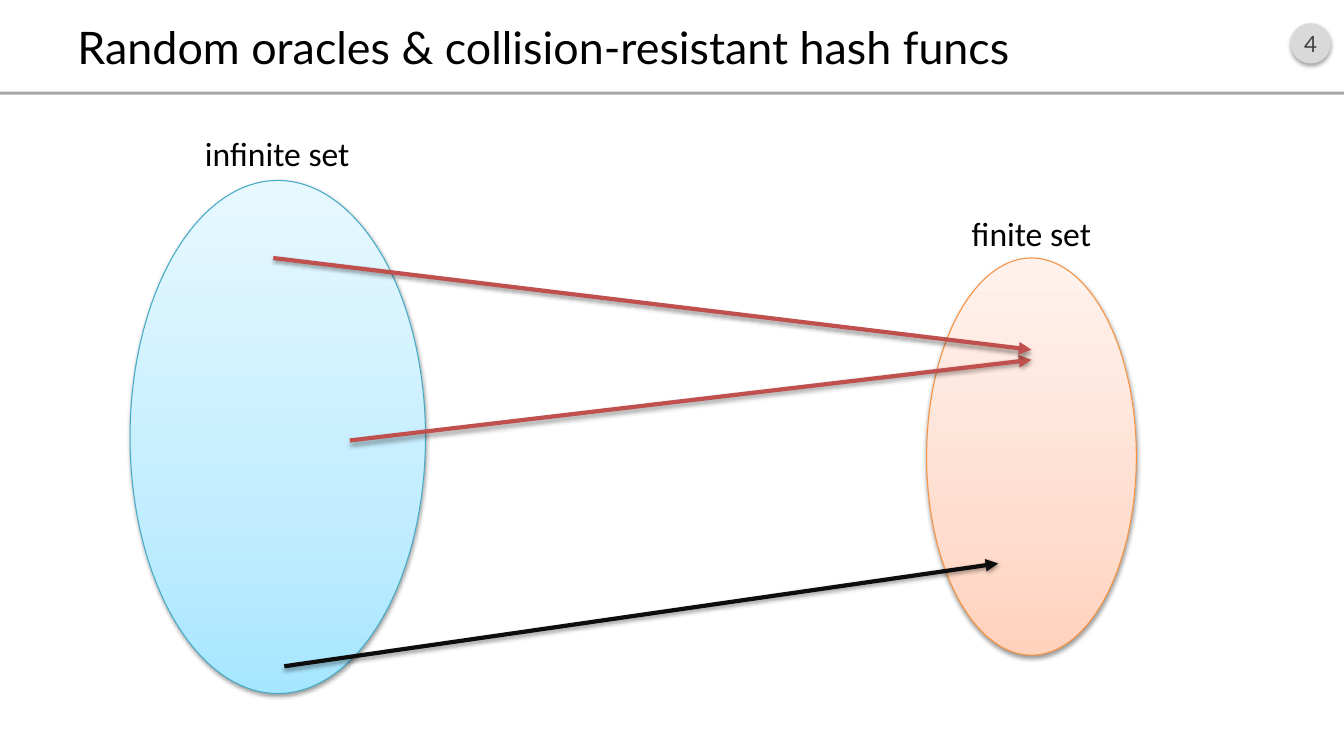
import copy

import lxml.etree
import pptx
import pptx.dml.color
import pptx.enum.shapes
import pptx.enum.text
import pptx.oxml
import pptx.oxml.ns
import pptx.util

PX = 9144  # EMU per px, 100 px to the inch
COLORS = {
    "text": "000000",
    "badge": "D9D9D9",
    "badge text": "404040",
    "rule": "A6A6A6",
    "collision": "C0504D",
    "mapping": "0D0D0D",
    "infinite line": "46AAC5",
    "finite line": "F69240",
}
GRADIENTS = {
    "infinite": ["A7E6FF", "C1EDFF", "E7F8FF"],
    "finite": ["FFD2BD", "FFDED0", "FFF2ED"],
}
STOPS = [0, 0.35, 1]
rgb = pptx.dml.color.RGBColor.from_string
qn = pptx.oxml.ns.qn
SHAPE = pptx.enum.shapes.MSO_SHAPE
ALIGN = pptx.enum.text.PP_ALIGN
ANCHOR = pptx.enum.text.MSO_ANCHOR


def add_shadow(item, opacity, distance):
    """Give a shape or connector a soft shadow straight below it."""
    properties = item._element.spPr
    effects = properties.find(qn("a:effectLst"))
    if effects is None:
        effects = lxml.etree.SubElement(properties, qn("a:effectLst"))
    effects.append(pptx.oxml.parse_xml(
        f'<a:outerShdw {pptx.oxml.ns.nsdecls("a")} blurRad="{round(3.1 * 12700)}" '
        f'dist="{round(distance * 12700)}" dir="5400000" rotWithShape="0">'
        f'<a:srgbClr val="000000"><a:alpha val="{opacity * 1000}"/></a:srgbClr>'
        '</a:outerShdw>'))


def write(holder, words, size, font, color, align, anchor):
    frame = holder.text_frame
    frame.text = words
    frame.vertical_anchor = anchor
    paragraph = frame.paragraphs[0]
    paragraph.alignment = align
    run_font = paragraph.runs[0].font
    run_font.size = pptx.util.Pt(size)
    run_font.name = font
    run_font.color.rgb = rgb(COLORS[color])


deck = pptx.Presentation()
deck.slide_width, deck.slide_height = 1333 * PX, 750 * PX
slide = deck.slides.add_slide(deck.slide_layouts[6])
shapes = slide.shapes

# Header: page badge, rule and title
badge = shapes.add_shape(SHAPE.OVAL, 1280 * PX, 23 * PX, 40 * PX, 40 * PX)
rule = shapes.add_shape(SHAPE.RECTANGLE, 0, 91 * PX, 1333 * PX, 3 * PX)
for part, color in [(badge, "badge"), (rule, "rule")]:
    part.shadow.inherit = False
    part.fill.solid()
    part.fill.fore_color.rgb = rgb(COLORS[color])
    part.line.fill.background()
add_shadow(badge, 35, 1.8)
badge.text_frame.margin_left = badge.text_frame.margin_right = 0
write(badge, "4", 16, "Lato", "badge text", ALIGN.CENTER, ANCHOR.MIDDLE)

title = shapes.add_textbox(67 * PX, 16 * PX, 1200 * PX, 60 * PX)
title.text_frame.word_wrap = True
write(title, "Random oracles & collision-resistant hash funcs", 32, "Lato", "text",
      ALIGN.LEFT, ANCHOR.MIDDLE)

# The two sets, each with its label above
for kind, set_box, label_box in [
    ("infinite", (129, 179, 293, 509), (187, 127, 176, 50)),
    ("finite", (919, 256, 208, 394), (948, 206, 150, 50)),
]:
    oval = shapes.add_shape(SHAPE.OVAL, *[length * PX for length in set_box])
    oval.shadow.inherit = False
    oval.fill.gradient()
    oval.fill.gradient_angle = 90
    first_stop = oval._element.spPr.find(".//" + qn("a:gs"))
    first_stop.addnext(copy.deepcopy(first_stop))
    for stop, position, color in zip(oval.fill.gradient_stops, STOPS, GRADIENTS[kind]):
        stop.position = position
        stop.color.rgb = rgb(color)
    oval.line.color.rgb = rgb(COLORS[f"{kind} line"])
    oval.line.width = pptx.util.Pt(0.75)
    add_shadow(oval, 38, 1.6)

    label = shapes.add_textbox(*[length * PX for length in label_box])
    label.text_frame.word_wrap = False
    label.text_frame.auto_size = pptx.enum.text.MSO_AUTO_SIZE.SHAPE_TO_FIT_TEXT
    write(label, f"{kind} set", 24, "Calibri", "text", ALIGN.CENTER, ANCHOR.TOP)

# Hash mappings; the two collision arrows meet
for color, ends in [
    ("mapping", (282, 661, 990, 559)),
    ("collision", (347, 437, 1023, 357)),
    ("collision", (271, 256, 1023, 347)),
]:
    arrow = shapes.add_connector(pptx.enum.shapes.MSO_CONNECTOR.STRAIGHT,
                                 *[length * PX for length in ends])
    arrow.line.color.rgb = rgb(COLORS[color])
    arrow.line.width = pptx.util.Pt(3)
    lxml.etree.SubElement(arrow.line._get_or_add_ln(), qn("a:tailEnd"), type="triangle")
    add_shadow(arrow, 38, 1.6)

deck.save("out.pptx")
